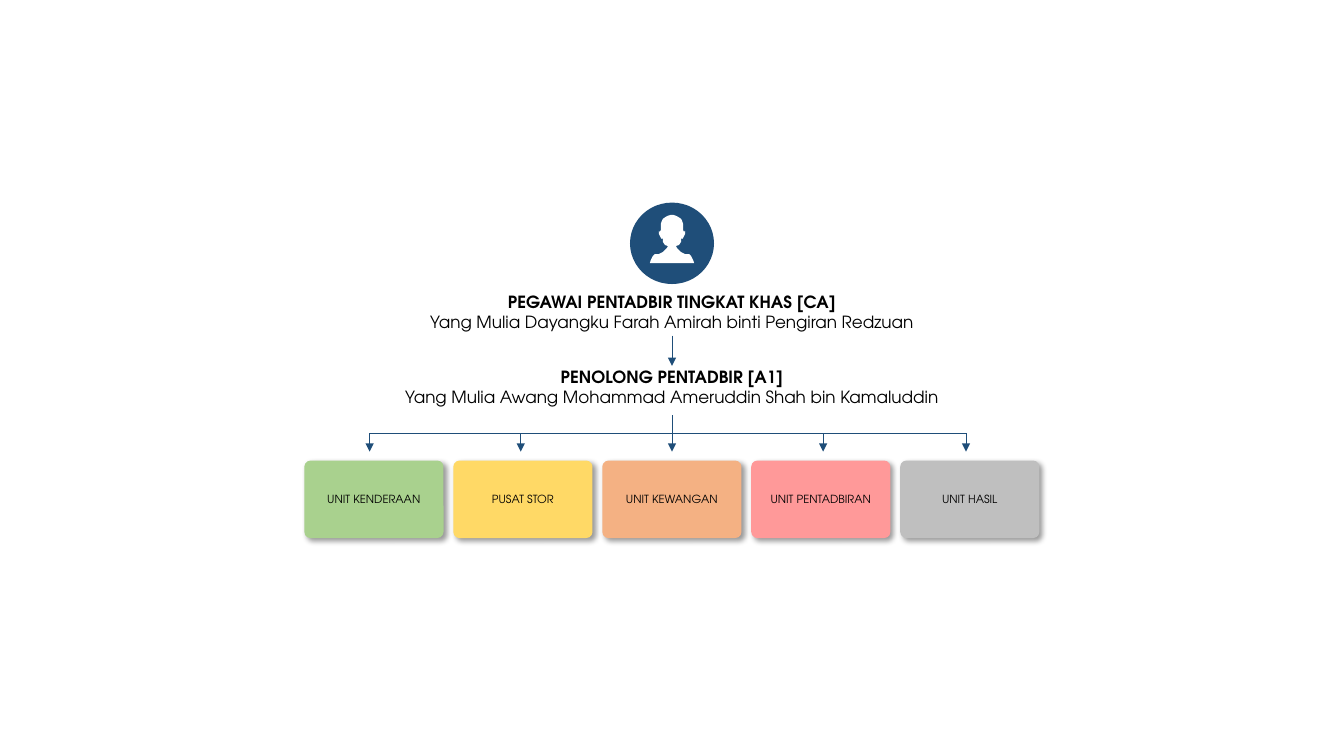
from lxml.etree import SubElement
from pptx import Presentation
from pptx.dml.color import RGBColor
from pptx.enum.shapes import MSO_CONNECTOR, MSO_SHAPE
from pptx.enum.text import MSO_ANCHOR, MSO_AUTO_SIZE, PP_ALIGN
from pptx.oxml.ns import qn
from pptx.util import Pt

COLORS = {
    "navy": "1F4E79", "white": "FFFFFF", "black": "000000",
    "green": "A9D18E", "yellow": "FFD966", "orange": "F4B183",
    "pink": "FF9999", "grey": "BFBFBF",
}
UNITS = [
    ("UNIT KENDERAAN", "green"),
    ("PUSAT STOR", "yellow"),
    ("UNIT KEWANGAN", "orange"),
    ("UNIT PENTADBIRAN", "pink"),
    ("UNIT HASIL", "grey"),
]
CENTER = 480
BRANCHES = [264, 372, 588, 690]
BRANCH_TOP, BRANCH_BOTTOM = 309.6, 322.6
UNIT_LEFT, UNIT_TOP, UNIT_PITCH = 217.4, 329, 106.4
UNIT_WIDTH, UNIT_HEIGHT = 99.4, 55.4

# Right half of the bust, in units of 0.72 pt from the top of the head
BUST_HALF = [
    (1, 0), (4, 1), (6, 2), (9, 4), (10, 6), (11, 9), (11, 15), (12, 17),
    (13, 16), (13, 19), (11, 23), (10, 24), (9, 23), (9, 27), (7, 30),
    (4, 31), (5, 33), (7, 35), (9, 37), (13, 39), (17, 39), (19, 41),
    (21, 45), (22, 48),
]


class OrgChart:
    font = "TeX Gyre Adventor"
    line_width = 0.5

    def __init__(self, slide):
        self.slide = slide
        self.shapes = slide.shapes

    def color(self, name):
        return RGBColor.from_string(COLORS[name])

    def paint(self, shape, fill):
        shape.shadow.inherit = False
        shape.fill.solid()
        shape.fill.fore_color.rgb = self.color(fill)
        shape.line.fill.background()

    def style_text(self, paragraph, size, bold=False):
        paragraph.alignment = PP_ALIGN.CENTER
        for run in paragraph.runs:
            run.font.name = self.font
            run.font.size = Pt(size)
            run.font.bold = bold
            run.font.color.rgb = self.color("black")

    def officer(self, holder, post, name, top, width):
        """Fill a placeholder or text box with a bold post above a name."""
        holder.left, holder.top = Pt(CENTER - width / 2), Pt(top)
        holder.width, holder.height = Pt(width), Pt(36)
        frame = holder.text_frame
        frame.word_wrap = True
        frame.auto_size = MSO_AUTO_SIZE.NONE
        frame.vertical_anchor = MSO_ANCHOR.TOP
        frame.text = f"{post}\n{name}"
        for paragraph, bold in zip(frame.paragraphs, (True, False)):
            self.style_text(paragraph, 12, bold)

    def portrait(self, top):
        disc = self.shapes.add_shape(
            MSO_SHAPE.OVAL, Pt(CENTER - 30), Pt(top), Pt(60), Pt(58.2))
        self.paint(disc, "navy")
        outline = BUST_HALF + [(-x, y) for x, y in reversed(BUST_HALF)]
        builder = self.shapes.build_freeform(*outline[0], scale=Pt(0.72))
        builder.add_line_segments(outline[1:], close=True)
        self.paint(builder.convert_to_shape(Pt(CENTER), Pt(top + 8.7)), "white")

    def line(self, start, end, arrow=False):
        connector = self.shapes.add_connector(
            MSO_CONNECTOR.STRAIGHT, *map(Pt, start + end))
        connector.line.color.rgb = self.color("navy")
        connector.line.width = Pt(self.line_width)
        properties = connector._element.spPr
        if arrow:
            SubElement(properties.find(qn("a:ln")), qn("a:tailEnd"), type="triangle")
        SubElement(properties, qn("a:effectLst"))

    def soft_shadow(self, shape):
        effects = shape._element.spPr.find(qn("a:effectLst"))
        shadow = SubElement(
            effects, qn("a:outerShdw"), blurRad=str(Pt(4)), dist=str(Pt(3)),
            dir=str(45 * 60000), algn="tl", rotWithShape="0")
        tint = SubElement(shadow, qn("a:srgbClr"), val=COLORS["black"])
        SubElement(tint, qn("a:alpha"), val="40000")

    def unit(self, label, fill, left):
        box = self.shapes.add_shape(
            MSO_SHAPE.ROUNDED_RECTANGLE, Pt(left), Pt(UNIT_TOP),
            Pt(UNIT_WIDTH), Pt(UNIT_HEIGHT))
        box.adjustments[0] = 0.08
        self.paint(box, fill)
        self.soft_shadow(box)
        box.text_frame.vertical_anchor = MSO_ANCHOR.MIDDLE
        box.text_frame.text = label
        self.style_text(box.text_frame.paragraphs[0], 8)


def main():
    deck = Presentation()
    deck.slide_width, deck.slide_height = Pt(960), Pt(540)
    chart = OrgChart(deck.slides.add_slide(deck.slide_layouts[5]))

    chart.portrait(144.7)
    chart.officer(chart.shapes.title, "PEGAWAI PENTADBIR TINGKAT KHAS [CA]",
                  "Yang Mulia Dayangku Farah Amirah binti Pengiran Redzuan",
                  top=204.5, width=414)
    chart.line((CENTER, 239.8), (CENTER, 261.4), arrow=True)
    assistant = chart.shapes.add_textbox(0, 0, 0, 0)
    chart.officer(assistant, "PENOLONG PENTADBIR [A1]",
                  "Yang Mulia Awang Mohammad Ameruddin Shah bin Kamaluddin",
                  top=258.5, width=458)

    chart.line((CENTER, 296.6), (CENTER, BRANCH_BOTTOM), arrow=True)
    chart.line((BRANCHES[0], BRANCH_TOP), (BRANCHES[-1], BRANCH_TOP))
    for x in BRANCHES:
        chart.line((x, BRANCH_TOP), (x, BRANCH_BOTTOM), arrow=True)
    for index, (label, fill) in enumerate(UNITS):
        chart.unit(label, fill, UNIT_LEFT + index * UNIT_PITCH)

    deck.save("out.pptx")


if __name__ == "__main__":
    main()
